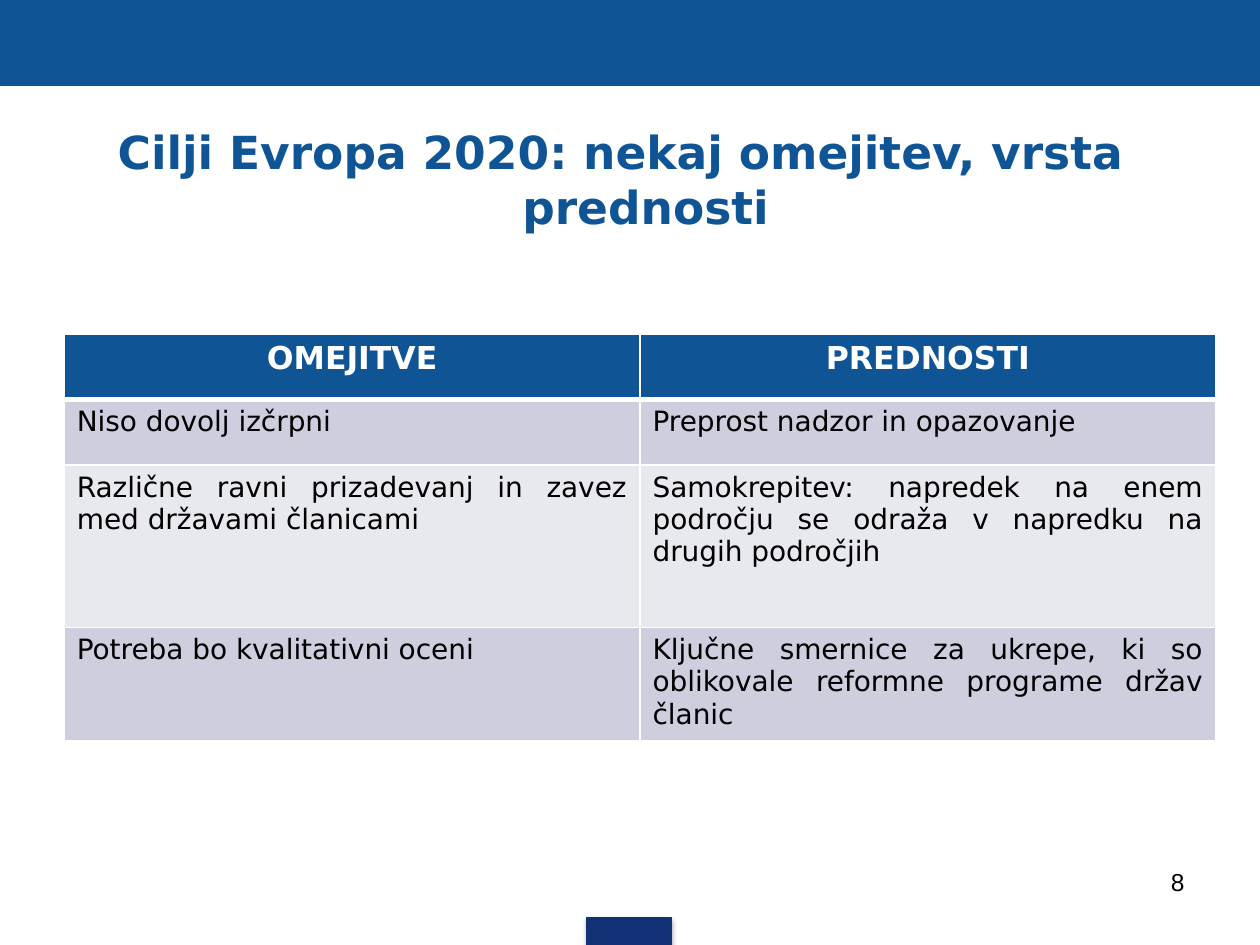
import pptx
import pptx.util
import pptx.oxml
import pptx.oxml.ns
import pptx.dml.color
import pptx.enum.shapes
import pptx.enum.text
import lxml.etree

Inches = pptx.util.Inches
Pt = pptx.util.Pt
ALIGN = pptx.enum.text.PP_ALIGN
ANCHOR = pptx.enum.text.MSO_ANCHOR
NAMESPACE = pptx.oxml.ns.nsdecls("a")
BLUE = "0F5494"


def color(hex_text):
    return pptx.dml.color.RGBColor.from_string(hex_text)


def write(frame, text, size, font, hex_text, align, bold=False):
    para = frame.paragraphs[0]
    para.alignment = align
    span = para.add_run()
    span.text = text
    span.font.size = Pt(size)
    span.font.name = font
    span.font.bold = bold
    span.font.color.rgb = color(hex_text)
    return para


deck = pptx.Presentation()
deck.slide_width = Inches(10)
deck.slide_height = Inches(7.5)
page = deck.slides.add_slide(deck.slide_layouts[6])

# Top band and bottom tab
bars = []
for left, top, width, height, fill in [
    (0, 0, 10, 0.68, BLUE),
    (4.66, 7.28, 0.67, 0.22, "133176"),
]:
    bar = page.shapes.add_shape(
        pptx.enum.shapes.MSO_SHAPE.RECTANGLE,
        Inches(left), Inches(top), Inches(width), Inches(height))
    bar.shadow.inherit = False
    bar.fill.solid()
    bar.fill.fore_color.rgb = color(fill)
    bar.line.color.rgb = color(fill)
    bar.line.width = Pt(0.75)
    bars.append(bar)

# Soft shadow under the bottom tab
effects = bars[1].element.spPr.find(pptx.oxml.ns.qn("a:effectLst"))
effects.append(pptx.oxml.parse_xml(
    f'<a:outerShdw {NAMESPACE} blurRad="{Pt(3.1)}" dist="{Pt(1.8)}" dir="5400000" '
    'rotWithShape="0"><a:srgbClr val="000000"><a:alpha val="35000"/></a:srgbClr>'
    '</a:outerShdw>'))

# Title with a hanging indent
title = page.shapes.add_textbox(Inches(0.43), Inches(0.91), Inches(9), Inches(1.02))
title.text_frame.word_wrap = True
title.text_frame.vertical_anchor = ANCHOR.MIDDLE
para = write(title.text_frame, "Cilji Evropa 2020: nekaj omejitev, vrsta prednosti",
             26, "DejaVu Sans", BLUE, ALIGN.CENTER, True)
properties = para._p.get_or_add_pPr()
properties.set("marL", str(Inches(0.39)))
properties.set("indent", str(Inches(-0.39)))

# Page number
number = page.shapes.add_textbox(Inches(7.17), Inches(6.83), Inches(2.33), Inches(0.52))
number.text_frame.word_wrap = True
write(number.text_frame, "8", 14, "Arial", "000000", ALIGN.RIGHT)

# Table of limits and advantages
rows = [
    ("OMEJITVE", "PREDNOSTI"),
    ("Niso dovolj izčrpni", "Preprost nadzor in opazovanje"),
    ("Različne ravni prizadevanj in zavez med državami članicami",
     "Samokrepitev: napredek na enem področju se odraža v napredku na drugih področjih"),
    ("Potreba bo kvalitativni oceni",
     "Ključne smernice za ukrepe, ki so oblikovale reformne programe držav članic"),
]
fills = [BLUE, "CECEDE", "E8E8EF", "CECEDE"]
heights = [0.52, 0.52, 1.29, 0.9]
table = page.shapes.add_table(
    len(rows), 2, Inches(0.51), Inches(2.65), Inches(9.13), Inches(sum(heights))).table
for column in table.columns:
    column.width = Inches(4.57)

for r, texts in enumerate(rows):
    table.rows[r].height = Inches(heights[r])
    for c, text in enumerate(texts):
        cell = table.cell(r, c)
        cell.fill.solid()
        cell.fill.fore_color.rgb = color(fills[r])
        if r == 0:
            write(cell.text_frame, text, 18, "DejaVu Sans", "FFFFFF", ALIGN.CENTER, True)
        else:
            write(cell.text_frame, text, 16, "DejaVu Sans", "000000", ALIGN.JUSTIFY)
        # White borders, thick between the header and the body
        widths = {"lnL": 1, "lnR": 1, "lnT": 3 if r == 1 else 1, "lnB": 3 if r == 0 else 1}
        cell_properties = cell._tc.get_or_add_tcPr()
        for position, (side, width) in enumerate(widths.items()):
            cell_properties.insert(position, pptx.oxml.parse_xml(
                f'<a:{side} {NAMESPACE} w="{Pt(width)}"><a:solidFill>'
                f'<a:srgbClr val="FFFFFF"/></a:solidFill></a:{side}>'))

deck.save("out.pptx")
